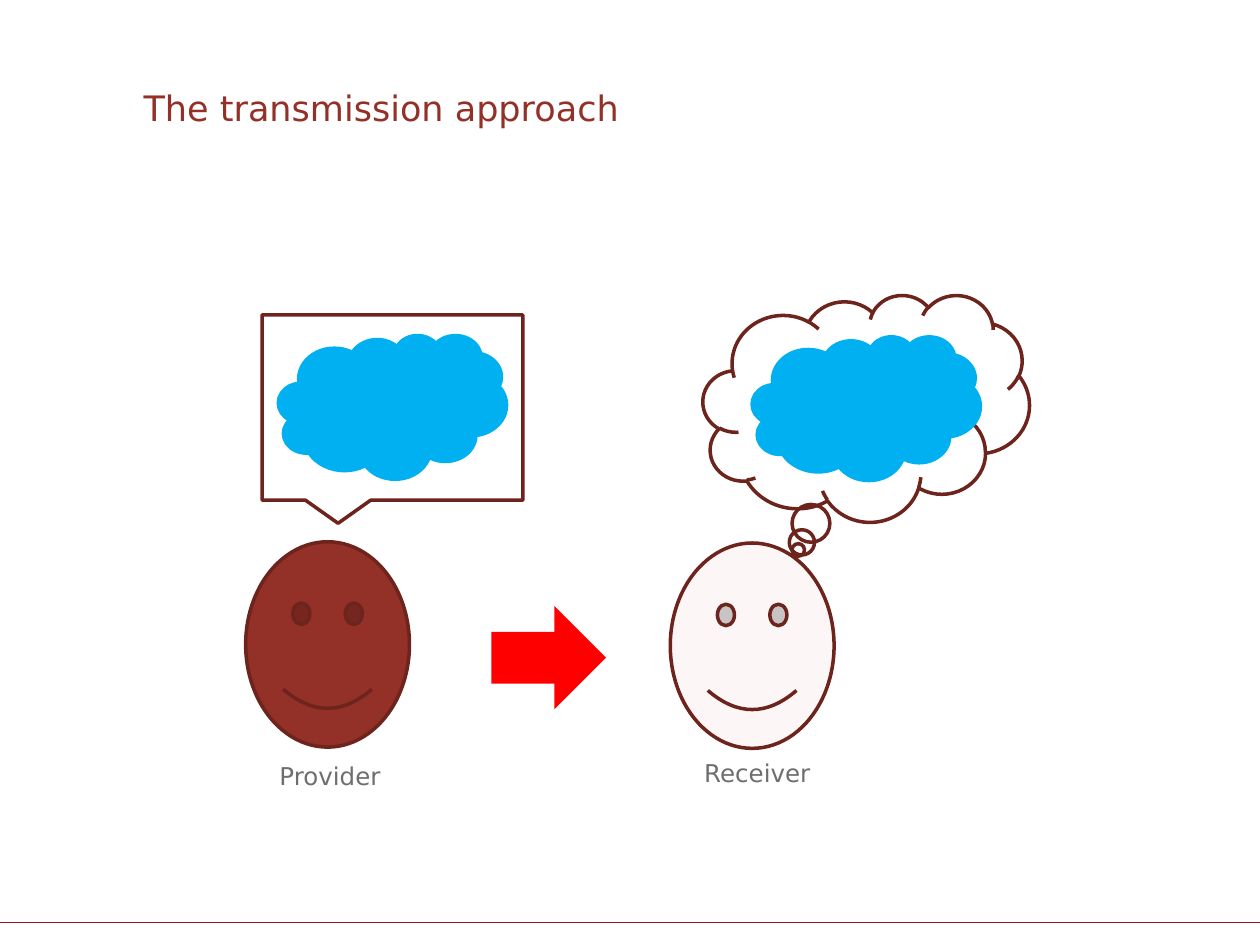
from dataclasses import dataclass
from typing import Optional

import pptx
import pptx.dml.color
import pptx.enum.shapes
import pptx.enum.text
import pptx.oxml
import pptx.util

# Grid: 100 columns by 75 rows of square cells
COLS, ROWS = 100, 75
CELL = pptx.util.Inches(0.1)

FONT = "DejaVu Sans"
RED, DARK_RED, BLUE, GREY = "933027", "6D241D", "00B0F0", "6E6E6E"
KIND = pptx.enum.shapes.MSO_SHAPE
ANCHOR = pptx.enum.text.MSO_ANCHOR


@dataclass
class Box:
    col: float
    row: float
    cols: float
    rows: float

    def emu(self) -> list[int]:
        return [round(n * CELL) for n in (self.col, self.row, self.cols, self.rows)]


@dataclass
class Figure:
    kind: int
    box: Box
    fill: Optional[str] = None
    line: Optional[str] = None


@dataclass
class Label:
    text: str
    box: Box
    size: float = 14
    color: str = GREY
    anchor: int = ANCHOR.TOP
    inset: Optional[float] = None


FIGURES = [
    Figure(KIND.SMILEY_FACE, Box(53.2, 43.1, 13, 16.3), "FCF6F6", DARK_RED),
    Figure(KIND.RIGHT_ARROW, Box(39, 48.1, 9.1, 8.2), "FF0000"),
    Figure(KIND.SMILEY_FACE, Box(19.5, 43, 13, 16.3), RED, DARK_RED),
    Figure(KIND.RECTANGULAR_CALLOUT, Box(20.8, 25, 20.7, 14.7), line=DARK_RED),
    Figure(KIND.CLOUD, Box(22.1, 26.6, 18.1, 11.4), BLUE, BLUE),
    Figure(KIND.CLOUD_CALLOUT, Box(55.8, 23.4, 25.9, 18), line=DARK_RED),
    Figure(KIND.CLOUD, Box(59.7, 26.7, 18.1, 11.4), BLUE, BLUE),
]

LABELS = [
    Label("The transmission approach", Box(11.4, 3.9, 81.6, 6.3), 20, RED,
          ANCHOR.BOTTOM, 0),
    Label("Provider", Box(21.2, 59.9, 17.4, 3.4)),
    Label("Receiver", Box(54.9, 59.7, 31.8, 3.4)),
]


def rgb(color: str) -> pptx.dml.color.RGBColor:
    return pptx.dml.color.RGBColor.from_string(color)


def draw_figure(s, fig: Figure) -> None:
    sp = s.shapes.add_shape(fig.kind, *fig.box.emu())
    sp.shadow.inherit = False
    if fig.fill:
        sp.fill.solid()
        sp.fill.fore_color.rgb = rgb(fig.fill)
    else:
        sp.fill.background()
    if fig.line:
        sp.line.color.rgb = rgb(fig.line)
        sp.line.width = pptx.util.Pt(2)
    else:
        sp.line.fill.background()


def draw_label(s, label: Label) -> None:
    tf = s.shapes.add_textbox(*label.box.emu()).text_frame
    tf.word_wrap = True
    tf.vertical_anchor = label.anchor
    if label.inset is not None:
        tf.margin_left = tf.margin_right = pptx.util.Inches(label.inset)
        tf.margin_top = tf.margin_bottom = pptx.util.Inches(label.inset)
    tf.text = label.text
    font = tf.paragraphs[0].runs[0].font
    font.name = FONT
    font.size = pptx.util.Pt(label.size)
    font.color.rgb = rgb(label.color)


def draw_rule(s, row: float) -> None:
    y = round(row * CELL)
    line = s.shapes.add_connector(
        pptx.enum.shapes.MSO_CONNECTOR.STRAIGHT, 0, y, COLS * CELL, y)
    line.line.color.rgb = rgb("901A1E")
    line.line.width = pptx.util.Pt(0.75)
    line._element.spPr.append(pptx.oxml.parse_xml(
        '<a:effectLst xmlns:a="http://schemas.openxmlformats.org/drawingml/2006/main"/>'))


def main() -> None:
    prs = pptx.Presentation()
    prs.slide_width, prs.slide_height = COLS * CELL, ROWS * CELL
    s = prs.slides.add_slide(prs.slide_layouts[6])

    # Footer rule
    draw_rule(s, 73.2)
    # Faces, callouts, clouds and arrow
    for fig in FIGURES:
        draw_figure(s, fig)
    # Title and captions
    for label in LABELS:
        draw_label(s, label)

    prs.save("out.pptx")


if __name__ == "__main__":
    main()
